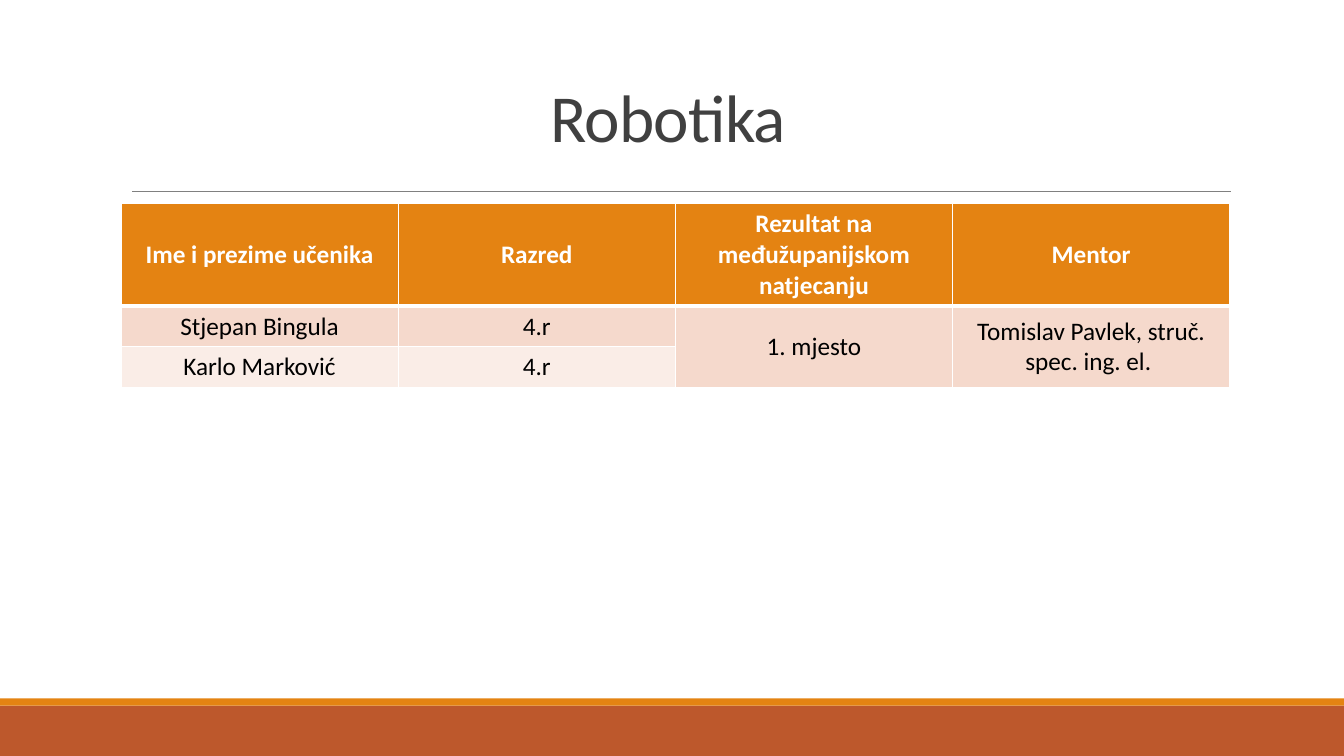
from dataclasses import dataclass

from lxml.etree import SubElement as Sub
from pptx import Presentation
from pptx.dml.color import RGBColor as Rgb
from pptx.enum.shapes import MSO_CONNECTOR as Link, MSO_SHAPE as Form
from pptx.enum.text import MSO_ANCHOR as Anchor, MSO_AUTO_SIZE as Fit, PP_ALIGN as Align
from pptx.oxml.ns import qn
from pptx.util import Cm, Pt


@dataclass(frozen=True)
class Theme:
    """Colours, font and type sizes of the slide."""
    font: str = "Calibri"
    orange: str = "E48312"
    rust: str = "BD582C"
    peach: str = "F5D9CC"
    pale: str = "FAEDE7"
    grey: str = "808080"
    ink: str = "404040"
    black: str = "000000"
    white: str = "FFFFFF"
    head: int = 48
    body: int = 18


LOOK = Theme()
WIDE, HIGH = 33.87, 19.05
LEFT, SPAN = 3.05, 27.94
ROWS = [
    ["Ime i prezime učenika", "Razred", "Rezultat na međužupanijskom natjecanju", "Mentor"],
    ["Stjepan Bingula", "4.r", "1. mjesto", "Tomislav Pavlek, struč. spec. ing. el. "],
    ["Karlo Marković", "4.r", "", ""],
]
TALL = [2.54, 1.03, 1.03]
FILLS = [LOOK.orange, LOOK.peach, LOOK.pale]


def write(frame, text, size=LOOK.body, color=LOOK.black, bold=False, lead=None, track=None):
    """Put one centred, formatted paragraph in a text frame."""
    para = frame.paragraphs[0]
    para.alignment = Align.CENTER
    if lead:
        para.line_spacing = lead
    run = para.add_run()
    run.text = text
    font = run.font
    font.name, font.size, font.bold = LOOK.font, Pt(size), bold
    font.color.rgb = Rgb.from_string(color)
    if track:
        font._element.set("spc", str(track))


def band(slide, top, tall, color):
    """Draw a plain strip across the slide."""
    strip = slide.shapes.add_shape(Form.RECTANGLE, 0, Cm(top), Cm(WIDE), Cm(tall))
    strip.shadow.inherit = False
    strip.fill.solid()
    strip.fill.fore_color.rgb = Rgb.from_string(color)
    strip.line.fill.background()


def rule(slide, left, right, top):
    """Draw the thin line under the title."""
    line = slide.shapes.add_connector(Link.STRAIGHT, Cm(left), Cm(top), Cm(right), Cm(top))
    line.line.color.rgb = Rgb.from_string(LOOK.grey)
    line.line.width = Pt(0.5)
    Sub(line._element.spPr, qn("a:effectLst"))


def title(slide, text):
    """Place and fill the title placeholder."""
    head = slide.shapes.title
    head.left, head.top, head.width, head.height = Cm(LEFT), Cm(0.76), Cm(SPAN), Cm(3.3)
    frame = head.text_frame
    frame.auto_size = Fit.NONE
    frame.vertical_anchor = Anchor.BOTTOM
    write(frame, text, size=LOOK.head, color=LOOK.ink, lead=0.85, track=-50)


def edge(cell, **sides):
    """Draw white cell borders with widths in points."""
    props = cell._tc.get_or_add_tcPr()
    for side, width in sides.items():
        line = Sub(props, qn(f"a:ln{side}"), w=str(Pt(width)))
        Sub(Sub(line, qn("a:solidFill")), qn("a:srgbClr"), val=LOOK.white)


def results(slide):
    """Build the table of pupils, results and mentor."""
    count = len(ROWS[0])
    table = slide.shapes.add_table(
        len(ROWS), count, Cm(LEFT), Cm(5.13), Cm(SPAN), Cm(sum(TALL))).table
    for col in table.columns:
        col.width = Cm(SPAN / count)
    for r, (row, tall, fill) in enumerate(zip(ROWS, TALL, FILLS)):
        table.rows[r].height = Cm(tall)
        top = r == 0
        for c, text in enumerate(row):
            cell = table.cell(r, c)
            cell.vertical_anchor = Anchor.MIDDLE
            edge(cell, L=1, R=1, T=3 if r == 1 else 1, B=3 if top else 1)
            cell.fill.solid()
            cell.fill.fore_color.rgb = Rgb.from_string(fill)
            if text:
                write(cell.text_frame, text, bold=top,
                      color=LOOK.white if top else LOOK.black)
    for c in (2, 3):
        table.cell(1, c).merge(table.cell(2, c))


def main():
    """Build and save the slide."""
    deck = Presentation()
    deck.slide_width, deck.slide_height = Cm(WIDE), Cm(HIGH)
    slide = deck.slides.add_slide(deck.slide_layouts[5])
    band(slide, 17.78, 1.27, LOOK.rust)
    band(slide, 17.6, 0.18, LOOK.orange)
    rule(slide, 3.33, 31.01, 4.83)
    title(slide, "Robotika ")
    results(slide)
    deck.save("out.pptx")


if __name__ == "__main__":
    main()
